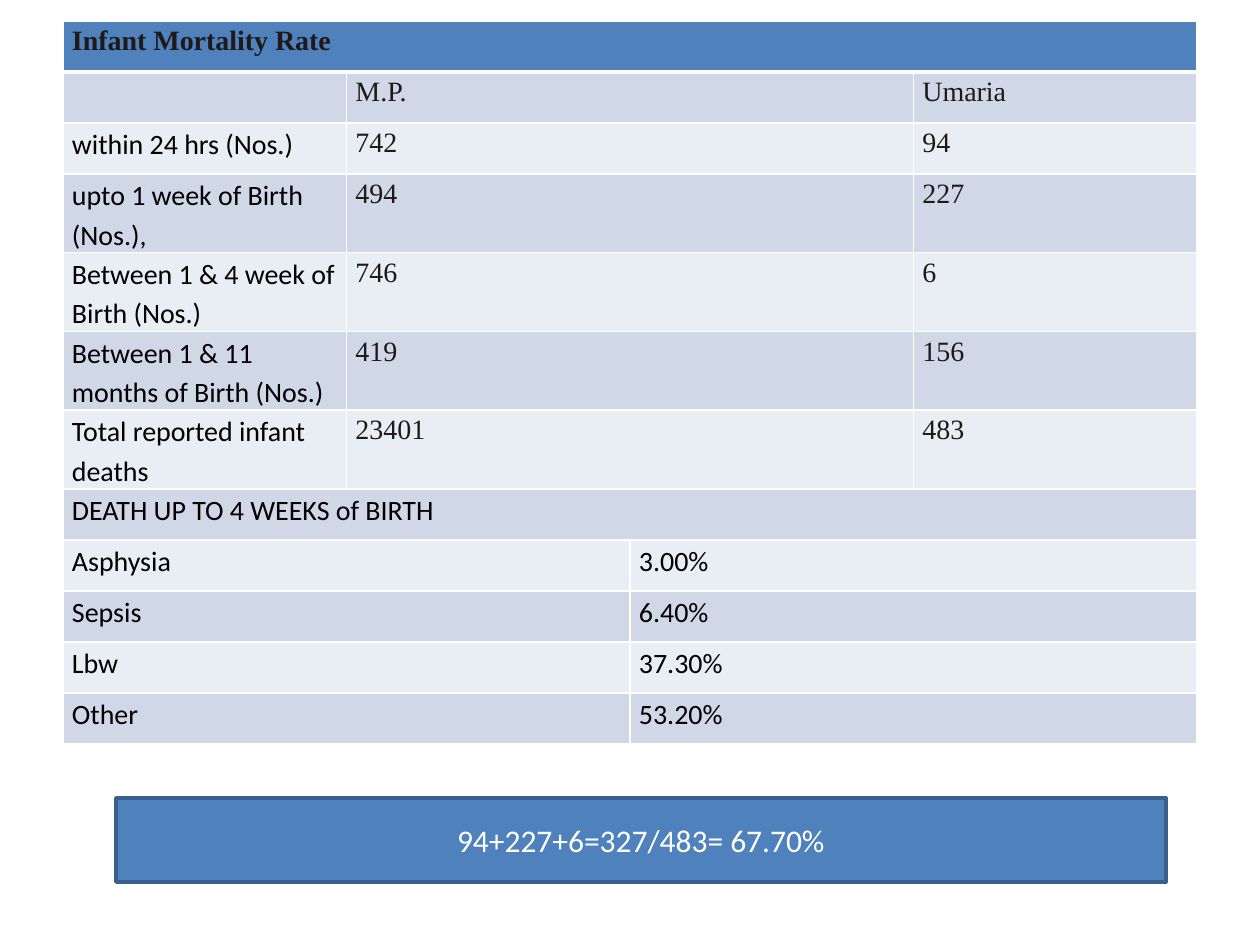
from lxml.etree import SubElement
from pptx import Presentation
from pptx.dml.color import RGBColor
from pptx.enum.shapes import MSO_SHAPE as Shape
from pptx.enum.text import MSO_ANCHOR as Anchor, PP_ALIGN as Align
from pptx.oxml.ns import qn
from pptx.util import Emu, Pt

BLUE = RGBColor(0x4F, 0x81, 0xBD)
OUTLINE = RGBColor(0x3A, 0x5F, 0x8C)
BAND_DARK = RGBColor(0xD0, 0xD8, 0xE8)
BAND_LIGHT = RGBColor(0xE9, 0xED, 0xF4)
INK = RGBColor(0x1F, 0x1A, 0x17)
BLACK = RGBColor(0, 0, 0)
WHITE = RGBColor(0xFF, 0xFF, 0xFF)
EMU_PER_INCH = 914400
PX_PER_INCH = 126
COLUMNS = 4
ROW_HEIGHT = 51

MORTALITY = [
    ("", "M.P.", "Umaria"),
    ("within 24 hrs (Nos.)", "742", "94"),
    ("upto 1 week of Birth (Nos.),", "494", "227"),
    ("Between 1 & 4 week of Birth (Nos.)", "746", "6"),
    ("Between 1 & 11 months of Birth (Nos.)", "419", "156"),
    ("Total reported infant deaths", "23401", "483"),
]
CAUSES = [
    ("Asphysia", "3.00%"),
    ("Sepsis", "6.40%"),
    ("Lbw", "37.30%"),
    ("Other", "53.20%"),
]
ROWS = [("Infant Mortality Rate",), *MORTALITY, ("DEATH UP TO 4 WEEKS of BIRTH",), *CAUSES]
SPANS = {1: (4,), 2: (2, 2), 3: (1, 2, 1)}


def px(length):
    """Turn a length in px into EMU."""
    return Emu(round(length * EMU_PER_INCH / PX_PER_INCH))


def write(frame, text, *, size=16, font="Calibri", color=BLACK, bold=False, align=Align.LEFT, spacing=1.15):
    """Put one formatted paragraph into a text frame."""
    para = frame.paragraphs[0]
    para.alignment = align
    para.line_spacing = spacing
    if not text:
        para.font.size = Pt(size)
        return
    span = para.add_run()
    span.text = text
    span.font.size = Pt(size)
    span.font.name = font
    span.font.bold = bold
    span.font.color.rgb = color


def style_cell(cell, fill, bottom):
    """Give a cell its margins, white borders and fill."""
    cell.margin_left = cell.margin_right = px(9)
    cell.margin_top = cell.margin_bottom = 0
    properties = cell._tc.get_or_add_tcPr()
    for side, width in (("L", 1), ("R", 1), ("T", 1), ("B", bottom)):
        line = SubElement(properties, qn(f"a:ln{side}"), w=str(Pt(width)))
        SubElement(SubElement(line, qn("a:solidFill")), qn("a:srgbClr"), val=str(WHITE))
    cell.fill.solid()
    cell.fill.fore_color.rgb = fill


def add_mortality_table(page, left, top, width, height):
    """Place the table of infant deaths and their causes."""
    frame = page.shapes.add_table(len(ROWS), COLUMNS, px(left), px(top), px(width), px(height))
    table = frame.table
    for index, texts in enumerate(ROWS):
        header = index == 0
        fill = BLUE if header else BAND_DARK if index % 2 else BAND_LIGHT
        table.rows[index].height = px(ROW_HEIGHT)
        for column in range(COLUMNS):
            style_cell(table.cell(index, column), fill, 3 if header else 1)
        column = 0
        for text, span in zip(texts, SPANS[len(texts)]):
            cell = table.cell(index, column)
            if span > 1:
                cell.merge(table.cell(index, column + span - 1))
            serif = header or (len(texts) == 3 and column > 0)
            look = {"font": "Times New Roman", "color": INK} if serif else {}
            write(cell.text_frame, text, bold=header, **look)
            column += span
    frame.height = px(height)


def add_sum_box(page, left, top, width, height):
    """Place the box with the share of early deaths."""
    box = page.shapes.add_shape(Shape.RECTANGLE, px(left), px(top), px(width), px(height))
    box.shadow.inherit = False
    box.fill.solid()
    box.fill.fore_color.rgb = BLUE
    box.line.color.rgb = OUTLINE
    box.line.width = Pt(2)
    box.text_frame.word_wrap = True
    box.text_frame.vertical_anchor = Anchor.MIDDLE
    write(box.text_frame, "94+227+6=327/483= 67.70%", size=18, color=WHITE, align=Align.CENTER, spacing=1.0)


def main():
    """Build the slide and save it."""
    deck = Presentation()
    deck.slide_width, deck.slide_height = px(1260), px(945)
    page = deck.slides.add_slide(deck.slide_layouts[6])
    add_mortality_table(page, 63, 21, 1134, 756)
    add_sum_box(page, 116, 798, 1050, 84)
    deck.save("out.pptx")


if __name__ == "__main__":
    main()
